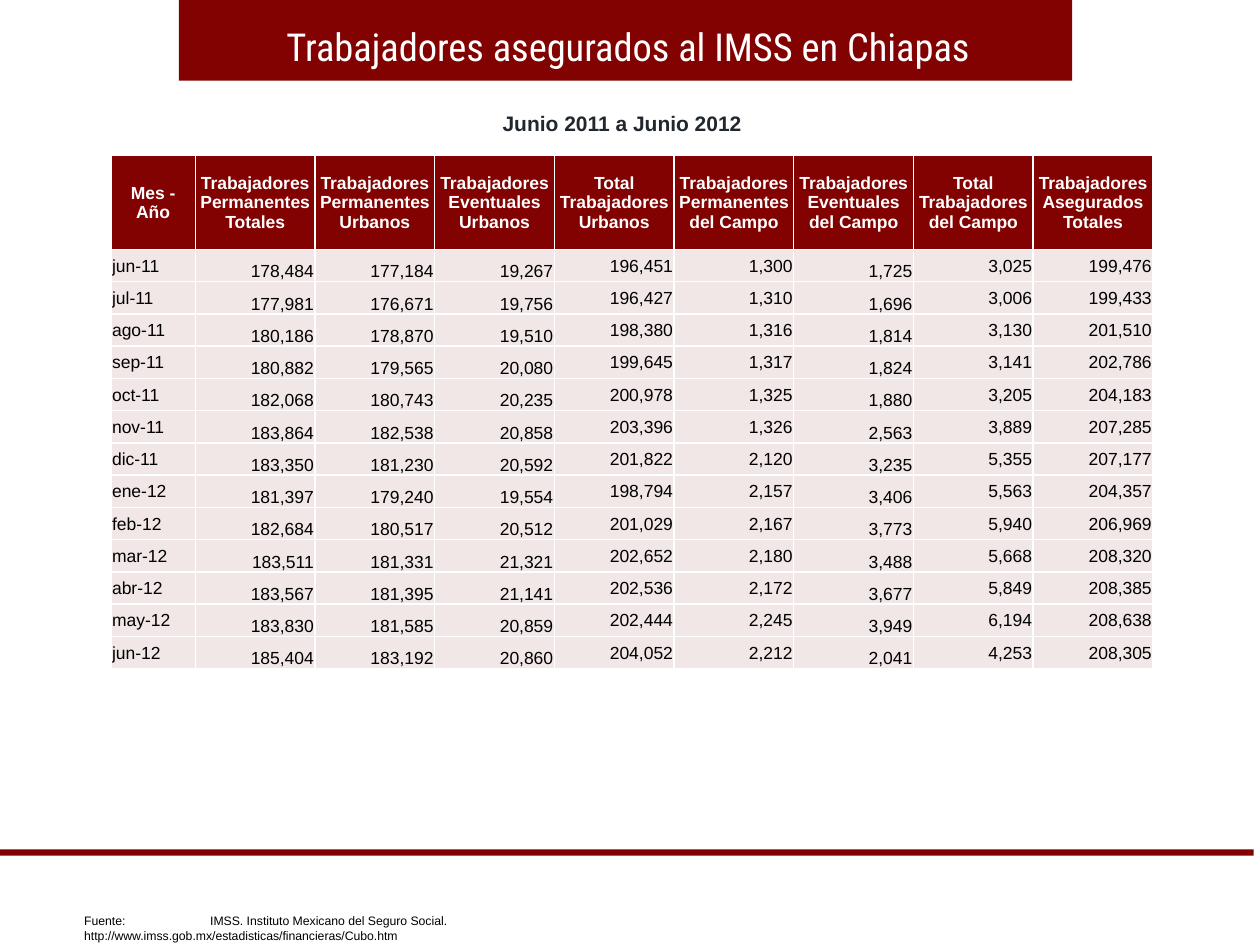
"""Build the slide on workers insured by IMSS in Chiapas, June 2011 to June 2012."""
from lxml import etree
from pptx import Presentation
from pptx.dml.color import RGBColor
from pptx.enum.shapes import MSO_SHAPE as SHAPE
from pptx.enum.text import MSO_ANCHOR as ANCHOR, MSO_AUTO_SIZE as AUTO, PP_ALIGN as ALIGN
from pptx.oxml.ns import qn
from pptx.util import Inches, Pt

MAROON = RGBColor(0x82, 0x01, 0x01)
BLUSH = RGBColor(0xF1, 0xE7, 0xE7)
INK = RGBColor(0x21, 0x27, 0x2E)
WHITE = RGBColor(0xFF, 0xFF, 0xFF)
BLACK = RGBColor(0x00, 0x00, 0x00)

HEADINGS = [
    "Mes - Año",
    "Trabajadores Permanentes Totales",
    "Trabajadores Permanentes Urbanos",
    "Trabajadores Eventuales Urbanos",
    "Total Trabajadores Urbanos",
    "Trabajadores Permanentes del Campo",
    "Trabajadores Eventuales del Campo",
    "Total Trabajadores del Campo",
    "Trabajadores Asegurados Totales",
]
MONTHS = [
    "jun-11 178,484 177,184 19,267 196,451 1,300 1,725 3,025 199,476",
    "jul-11 177,981 176,671 19,756 196,427 1,310 1,696 3,006 199,433",
    "ago-11 180,186 178,870 19,510 198,380 1,316 1,814 3,130 201,510",
    "sep-11 180,882 179,565 20,080 199,645 1,317 1,824 3,141 202,786",
    "oct-11 182,068 180,743 20,235 200,978 1,325 1,880 3,205 204,183",
    "nov-11 183,864 182,538 20,858 203,396 1,326 2,563 3,889 207,285",
    "dic-11 183,350 181,230 20,592 201,822 2,120 3,235 5,355 207,177",
    "ene-12 181,397 179,240 19,554 198,794 2,157 3,406 5,563 204,357",
    "feb-12 182,684 180,517 20,512 201,029 2,167 3,773 5,940 206,969",
    "mar-12 183,511 181,331 21,321 202,652 2,180 3,488 5,668 208,320",
    "abr-12 183,567 181,395 21,141 202,536 2,172 3,677 5,849 208,385",
    "may-12 183,830 181,585 20,859 202,444 2,245 3,949 6,194 208,638",
    "jun-12 185,404 183,192 20,860 204,052 2,212 2,041 4,253 208,305",
]
BOTTOM_COLUMNS = (1, 2, 3, 6)


def write(frame, text, color, align=ALIGN.LEFT, **font):
    paragraph = frame.paragraphs[0]
    paragraph.alignment = align
    run = paragraph.add_run()
    run.text = text
    for name, value in font.items():
        setattr(run.font, name, value)
    run.font.color.rgb = color
    return paragraph


prs = Presentation()
prs.slide_width, prs.slide_height = Inches(10), Inches(7.5)
slide = prs.slides.add_slide(prs.slide_layouts[5])
title = slide.shapes.title

for left, top, width, height in [(1.42, 0, 7.09, 0.64), (0, 6.74, 9.95, 0.05)]:
    band = slide.shapes.add_shape(
        SHAPE.RECTANGLE, Inches(left), Inches(top), Inches(width), Inches(height))
    band.shadow.inherit = False
    band.fill.solid()
    band.fill.fore_color.rgb = MAROON
    band.line.fill.background()
    title.element.addprevious(band.element)

title_place = {"left": 1.46, "top": 0.13, "width": 7.05, "height": 0.47}
for name, value in title_place.items():
    setattr(title, name, Inches(value))
write(title.text_frame, "Trabajadores asegurados al IMSS en Chiapas", WHITE, ALIGN.CENTER,
      size=Pt(22), name="Roboto Condensed", bold=False)
title.text_frame.vertical_anchor = ANCHOR.TOP
title.text_frame.auto_size = AUTO.SHAPE_TO_FIT_TEXT

period = slide.shapes.add_textbox(Inches(3.89), Inches(0.83), Inches(2.12), Inches(0.3)).text_frame
period.word_wrap = False
period.auto_size = AUTO.SHAPE_TO_FIT_TEXT
write(period, "Junio 2011 a Junio 2012", INK, size=Pt(12), name="Arial", bold=True)

citation = slide.shapes.add_textbox(Inches(0.57), Inches(7.2), Inches(5.08), Inches(0.22)).text_frame
citation.word_wrap = True
source_line = write(
    citation,
    "Fuente:\tIMSS. Instituto Mexicano del Seguro Social. "
    "http://www.imss.gob.mx/estadisticas/financieras/Cubo.htm",
    BLACK, size=Pt(7), name="Arial")
tab_list = etree.SubElement(source_line._p.get_or_add_pPr(), qn("a:tabLst"))
etree.SubElement(tab_list, qn("a:tab"), pos=str(Inches(1)), algn="l")

rows = [HEADINGS] + [month.split() for month in MONTHS]
workers = slide.shapes.add_table(
    len(rows), len(HEADINGS), Inches(0.88), Inches(1.23), Inches(8.25), Inches(4.08)).table
workers.horz_banding = False
for index, column in enumerate(workers.columns):
    column.width = Inches(0.95 if index else 0.67)
for index, row in enumerate(workers.rows):
    row.height = Inches((4.08 - 0.75) / (len(rows) - 1) if index else 0.75)

margins = {"margin_left": 0.01, "margin_right": 0.01, "margin_top": 0.01, "margin_bottom": 0}
for r, values in enumerate(rows):
    for c, value in enumerate(values):
        cell = workers.cell(r, c)
        heading = r == 0
        for name, margin in margins.items():
            setattr(cell, name, Inches(margin))
        cell.vertical_anchor = ANCHOR.BOTTOM if not heading and c in BOTTOM_COLUMNS else ANCHOR.MIDDLE
        align = ALIGN.CENTER if heading else ALIGN.RIGHT if c else ALIGN.LEFT
        write(cell.text_frame, value, WHITE if heading else BLACK, align,
              size=Pt(10), name="Arial", bold=heading)
        properties = cell._tc.get_or_add_tcPr()
        for side in ("a:lnL", "a:lnR", "a:lnT", "a:lnB"):
            border = etree.SubElement(properties, qn(side), w=str(Pt(1)))
            paint = etree.SubElement(border, qn("a:solidFill"))
            etree.SubElement(paint, qn("a:srgbClr"), val=str(WHITE))
        cell.fill.solid()
        cell.fill.fore_color.rgb = MAROON if heading else BLUSH

prs.save("out.pptx")
